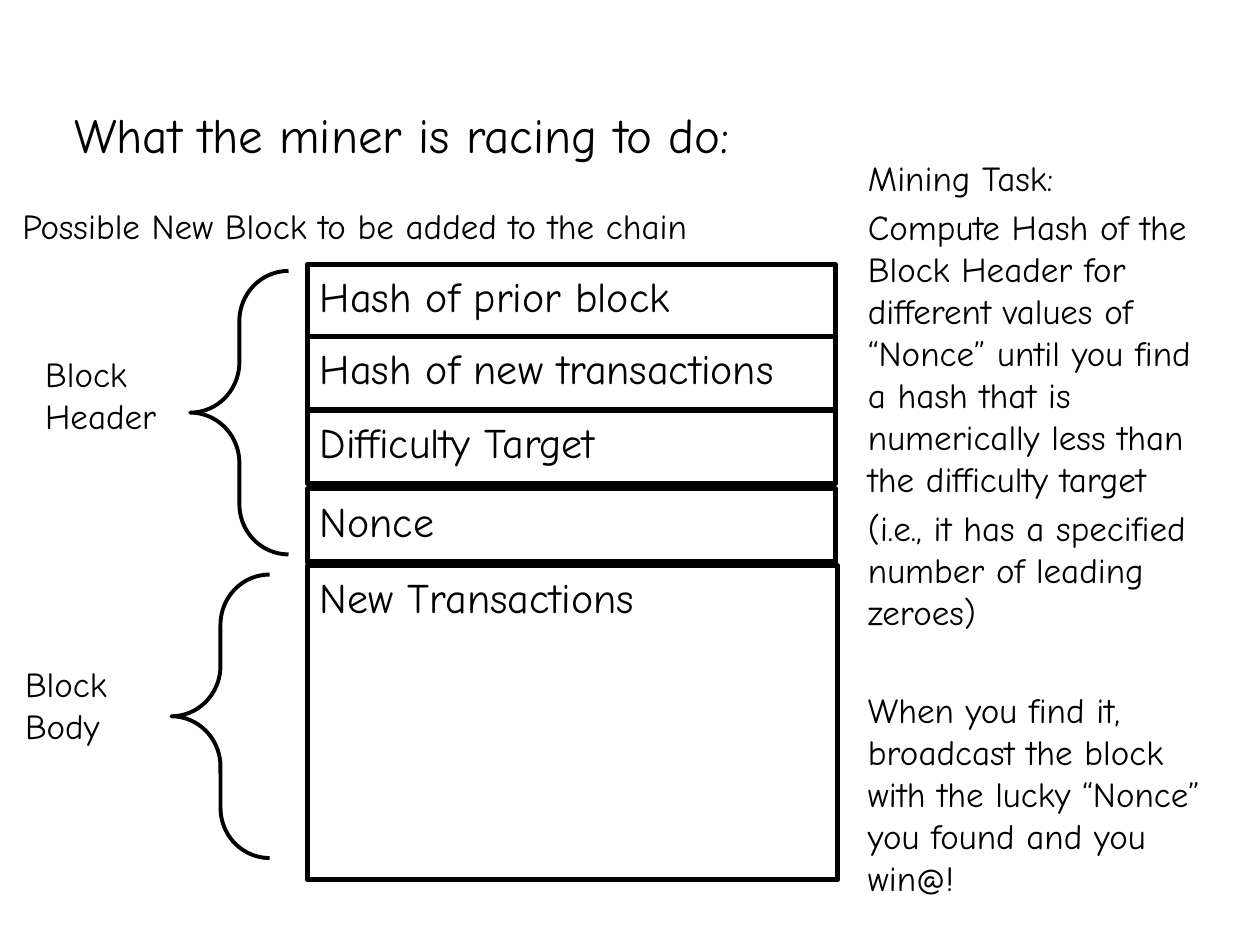
import pptx
import pptx.util
import pptx.dml.color
import pptx.enum.shapes
import pptx.enum.text

PX = 9144
FONT = "Comic Neue"
COLORS = {"ink": "000000", "paper": "FFFFFF"}
SHAPES = pptx.enum.shapes.MSO_SHAPE
ANCHORS = pptx.enum.text.MSO_ANCHOR


def color(name):
    return pptx.dml.color.RGBColor.from_string(COLORS[name])


def emu(*lengths):
    return [pptx.util.Emu(length * PX) for length in lengths]


def write(frame, text, size=20, before=(0,), anchor=ANCHORS.TOP):
    frame.word_wrap = True
    frame.vertical_anchor = anchor
    frame.margin_left, frame.margin_top, frame.margin_right, frame.margin_bottom = emu(10, 5, 10, 5)
    frame.text = text
    for index, paragraph in enumerate(frame.paragraphs):
        paragraph.alignment = pptx.enum.text.PP_ALIGN.LEFT
        paragraph.space_before = pptx.util.Pt(before[min(index, len(before) - 1)])
        paragraph.font.name = FONT
        paragraph.font.size = pptx.util.Pt(size)
        paragraph.font.color.rgb = color("ink")


def add_text(slide, box, text, **style):
    write(slide.shapes.add_textbox(*emu(*box)).text_frame, text, **style)


def add_outlined(slide, kind, box, weight):
    outlined = slide.shapes.add_shape(kind, *emu(*box))
    outlined.shadow.inherit = False
    outlined.fill.solid()
    outlined.fill.fore_color.rgb = color("paper")
    outlined.line.color.rgb = color("ink")
    outlined.line.width = pptx.util.Pt(weight)
    return outlined


def add_heading(slide, box):
    left, top, width, height = box
    add_text(slide, (left + 41, top, width - 41, 125), "What the miner is racing to do:",
             size=28, anchor=ANCHORS.MIDDLE)
    add_text(slide, (left, top + 113, 676, height - 113),
             "Possible New Block to be added to the chain", before=(4,))


def add_block(slide, box):
    left, top, width, height = box
    fields = [
        ("Hash of prior block", 0, width - 2, 58),
        ("Hash of new transactions", 57, width - 2, 58),
        ("Difficulty Target", 116, width - 2, 58),
        ("Nonce", 178, width - 2, 58),
        ("New Transactions", 239, width, height - 239),
    ]
    for text, offset, field_width, field_height in fields:
        field = add_outlined(slide, SHAPES.RECTANGLE, (left, top + offset, field_width, field_height), 3)
        write(field.text_frame, text, size=24)


def add_part_label(slide, box, text, label_offset):
    left, top, width, height = box
    brace = add_outlined(slide, SHAPES.LEFT_BRACE, (left + width - 78, top, 78, height), 2.25)
    brace.adjustments[0] = 0.512
    brace.adjustments[1] = 0.5
    add_text(slide, (left, top + label_offset, 149, 90), text, before=(4,))


def add_task(slide, box):
    paragraphs = [
        "Mining Task:",
        "Compute Hash of the Block Header for different values of “Nonce” until you find "
        "a hash that is numerically less than the difficulty target",
        "(i.e., it has a specified number of leading zeroes)",
        "When you find it, broadcast the block with the lucky “Nonce” you found and you win@!",
    ]
    add_text(slide, box, "\n".join(paragraphs), before=(4, 4, 4, 32))


def main():
    deck = pptx.Presentation()
    deck.slide_width, deck.slide_height = emu(1000, 750)
    slide = deck.slides.add_slide(deck.slide_layouts[6])
    add_heading(slide, (8, 44, 891, 177))
    add_block(slide, (244, 210, 421, 488))
    add_part_label(slide, (26, 215, 203, 225), "Block Header", 60)
    add_part_label(slide, (10, 456, 204, 225), "Block Body", 65)
    add_task(slide, (679, 119, 294, 607))
    deck.save("out.pptx")


if __name__ == "__main__":
    main()
